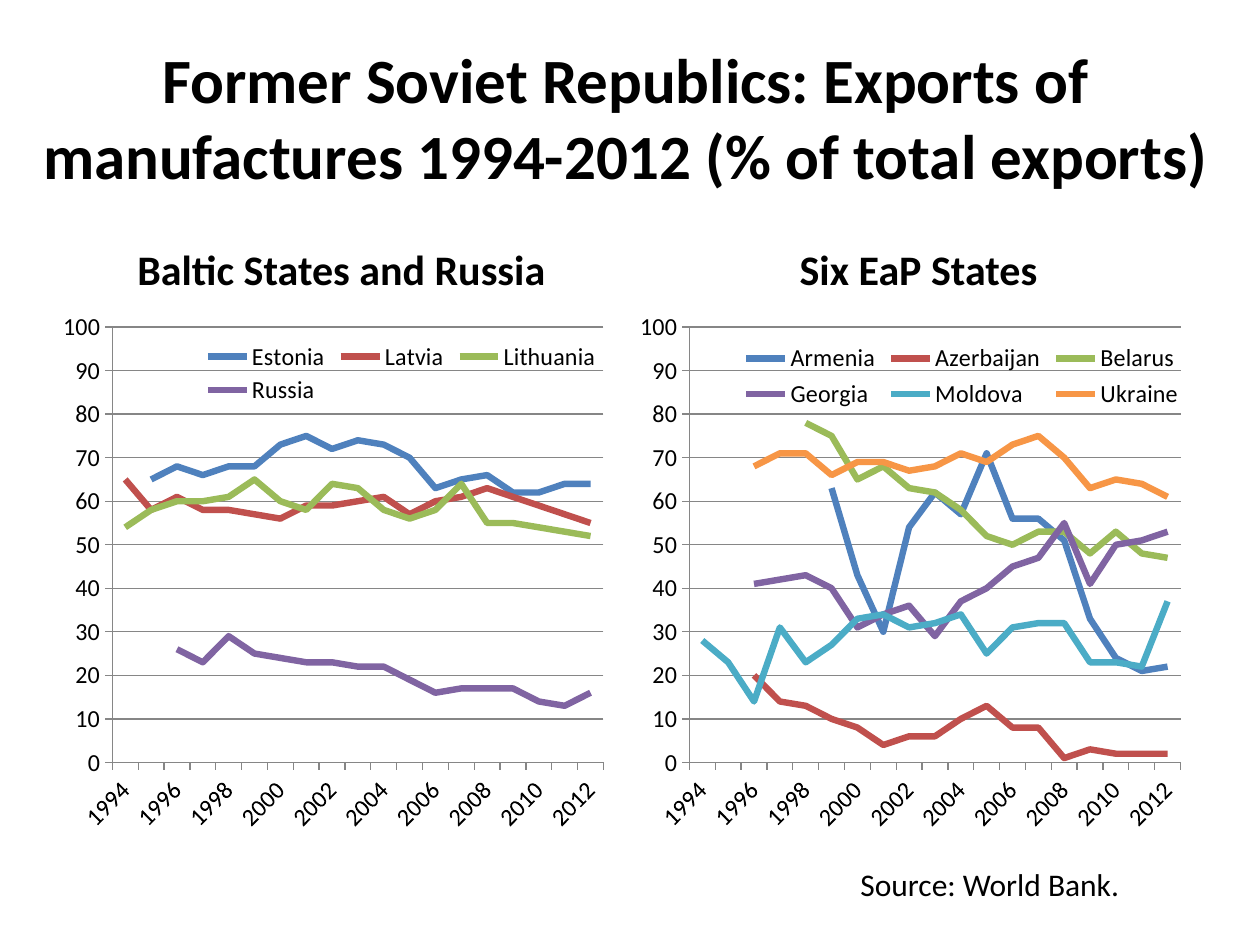
from lxml import etree
from pptx import Presentation
from pptx.chart.data import CategoryChartData
from pptx.dml.color import RGBColor
from pptx.enum.chart import XL_CHART_TYPE, XL_LEGEND_POSITION, XL_TICK_MARK
from pptx.enum.text import MSO_ANCHOR, PP_ALIGN
from pptx.oxml.ns import qn
from pptx.util import Inches, Pt

LINE = XL_CHART_TYPE.LINE
LEGEND_RIGHT = XL_LEGEND_POSITION.RIGHT
TICK_OUTSIDE = XL_TICK_MARK.OUTSIDE
LEFT, CENTER = PP_ALIGN.LEFT, PP_ALIGN.CENTER
TOP, MIDDLE, BOTTOM = MSO_ANCHOR.TOP, MSO_ANCHOR.MIDDLE, MSO_ANCHOR.BOTTOM

FONT = "Calibri"
BLACK, GRID_GRAY = "000000", "868686"
SERIES_COLORS = ["4F81BD", "C0504D", "9BBB59", "8064A2", "4BACC6", "F79646"]
YEARS = [str(year) for year in range(1994, 2013)]
PLOT_LAYOUT = (0.07, 0.05, 0.9, 0.8)
PANEL_WIDTH = 4.42

# Each series ends in 2012; years before its first value have no data.
BALTIC_AND_RUSSIA = {
    "Estonia": [65, 68, 66, 68, 68, 73, 75, 72, 74, 73, 70, 63, 65, 66, 62, 62, 64, 64],
    "Latvia": [65, 58, 61, 58, 58, 57, 56, 59, 59, 60, 61, 57, 60, 61, 63, 61, 59, 57, 55],
    "Lithuania": [54, 58, 60, 60, 61, 65, 60, 58, 64, 63, 58, 56, 58, 64, 55, 55, 54, 53, 52],
    "Russia": [26, 23, 29, 25, 24, 23, 23, 22, 22, 19, 16, 17, 17, 17, 14, 13, 16],
}
EAP_STATES = {
    "Armenia": [54, None, 63, 43, 30, 54, 62, 57, 71, 56, 56, 51, 33, 24, 21, 22],
    "Azerbaijan": [20, 14, 13, 10, 8, 4, 6, 6, 10, 13, 8, 8, 1, 3, 2, 2, 2],
    "Belarus": [78, 75, 65, 68, 63, 62, 58, 52, 50, 53, 53, 48, 53, 48, 47],
    "Georgia": [41, 42, 43, 40, 31, 34, 36, 29, 37, 40, 45, 47, 55, 41, 50, 51, 53],
    "Moldova": [28, 23, 14, 31, 23, 27, 33, 34, 31, 32, 34, 25, 31, 32, 32, 23, 23, 22, 37],
    "Ukraine": [68, 71, 71, 66, 69, 69, 67, 68, 71, 69, 73, 75, 70, 63, 65, 64, 61],
}
# Heading, left edge, series, legend layout (x, y, width, height as chart fractions)
PANELS = [
    ("Baltic States and Russia", 0.5, BALTIC_AND_RUSSIA, (0.23, 0.07, 0.74, 0.13)),
    ("Six EaP States", 5.08, EAP_STATES, (0.16, 0.07, 0.82, 0.14)),
]


def rgb(hex_color):
    return RGBColor.from_string(hex_color)


def format_font(font, size, bold=False, color=BLACK):
    font.name = FONT
    font.size = Pt(size)
    font.bold = bold
    font.color.rgb = rgb(color)


def write_text(shape, text, size=18, bold=False, align=LEFT, anchor=TOP, wrap=True):
    frame = shape.text_frame
    frame.word_wrap = wrap
    frame.vertical_anchor = anchor
    frame.text = text
    paragraph = frame.paragraphs[0]
    paragraph.alignment = align
    format_font(paragraph.font, size, bold)


def add_text(slide, text, left, top, width, height, **text_format):
    box = slide.shapes.add_textbox(Inches(left), Inches(top), Inches(width), Inches(height))
    write_text(box, text, **text_format)


def set_title(slide, text):
    title = slide.shapes.title
    title.left, title.top = Inches(0.2), Inches(0.3)
    title.width, title.height = Inches(9.53), Inches(1.25)
    write_text(title, text, size=36, bold=True, align=CENTER, anchor=MIDDLE)


def set_layout(parent, index, fractions, inner=False):
    """Give a plot area or legend a manual place, as fractions of the chart."""
    for old in parent.findall(qn("c:layout")):
        parent.remove(old)
    layout = etree.Element(qn("c:layout"))
    parent.insert(index, layout)
    manual = etree.SubElement(layout, qn("c:manualLayout"))
    settings = [("layoutTarget", "inner")] if inner else []
    settings += [("xMode", "edge"), ("yMode", "edge")]
    settings += zip("xywh", map(str, fractions))
    for tag, value in settings:
        etree.SubElement(manual, qn(f"c:{tag}"), val=value)


def format_axis(axis):
    axis.major_tick_mark = TICK_OUTSIDE
    format_font(axis.tick_labels.font, 14)
    axis.format.line.color.rgb = rgb(GRID_GRAY)


def format_axes(chart):
    years, percent = chart.category_axis, chart.value_axis
    format_axis(years)
    format_axis(percent)
    years.has_major_gridlines = False
    years._element.find(qn("c:txPr")).find(qn("a:bodyPr")).set("rot", "-2700000")
    skip = etree.Element(qn("c:tickLblSkip"), val="2")
    years._element.find(qn("c:noMultiLvlLbl")).addprevious(skip)
    percent.minimum_scale, percent.maximum_scale, percent.major_unit = 0, 100, 10
    percent.tick_labels.number_format = "0"
    percent.tick_labels.number_format_is_linked = False
    percent.major_gridlines.format.line.color.rgb = rgb(GRID_GRAY)


def add_line_chart(slide, left, exports, legend_layout):
    data = CategoryChartData()
    data.categories = YEARS
    for country, values in exports.items():
        data.add_series(country, [None] * (len(YEARS) - len(values)) + values)
    chart = slide.shapes.add_chart(
        LINE, Inches(left), Inches(2.38), Inches(PANEL_WIDTH), Inches(4.32), data
    ).chart
    format_font(chart.font, 10)
    chart.has_title = False
    format_axes(chart)

    plot = chart.plots[0]
    plot.vary_by_categories = False
    for series, color in zip(plot.series, SERIES_COLORS):
        series.smooth = False
        series.format.line.color.rgb = rgb(color)
        series.format.line.width = Pt(3.75)

    chart.has_legend = True
    legend = chart.legend
    legend.position = LEGEND_RIGHT
    legend.include_in_layout = True
    format_font(legend.font, 14)
    set_layout(legend._element, 1, legend_layout)
    plot_area = chart._chartSpace.find(qn("c:chart")).find(qn("c:plotArea"))
    set_layout(plot_area, 0, PLOT_LAYOUT, inner=True)


def main():
    presentation = Presentation()
    presentation.slide_width, presentation.slide_height = Inches(10), Inches(7.5)
    slide = presentation.slides.add_slide(presentation.slide_layouts[5])
    set_title(slide, "Former Soviet Republics: Exports of manufactures 1994-2012 (% of total exports)")
    for heading, left, exports, legend_layout in PANELS:
        add_text(slide, heading, left, 1.68, PANEL_WIDTH, 0.7,
                 size=24, bold=True, align=CENTER, anchor=BOTTOM)
        add_line_chart(slide, left, exports, legend_layout)
    add_text(slide, "Source: World Bank.", 6.73, 6.82, 2.28, 0.4, wrap=False)
    presentation.save("out.pptx")


if __name__ == "__main__":
    main()
